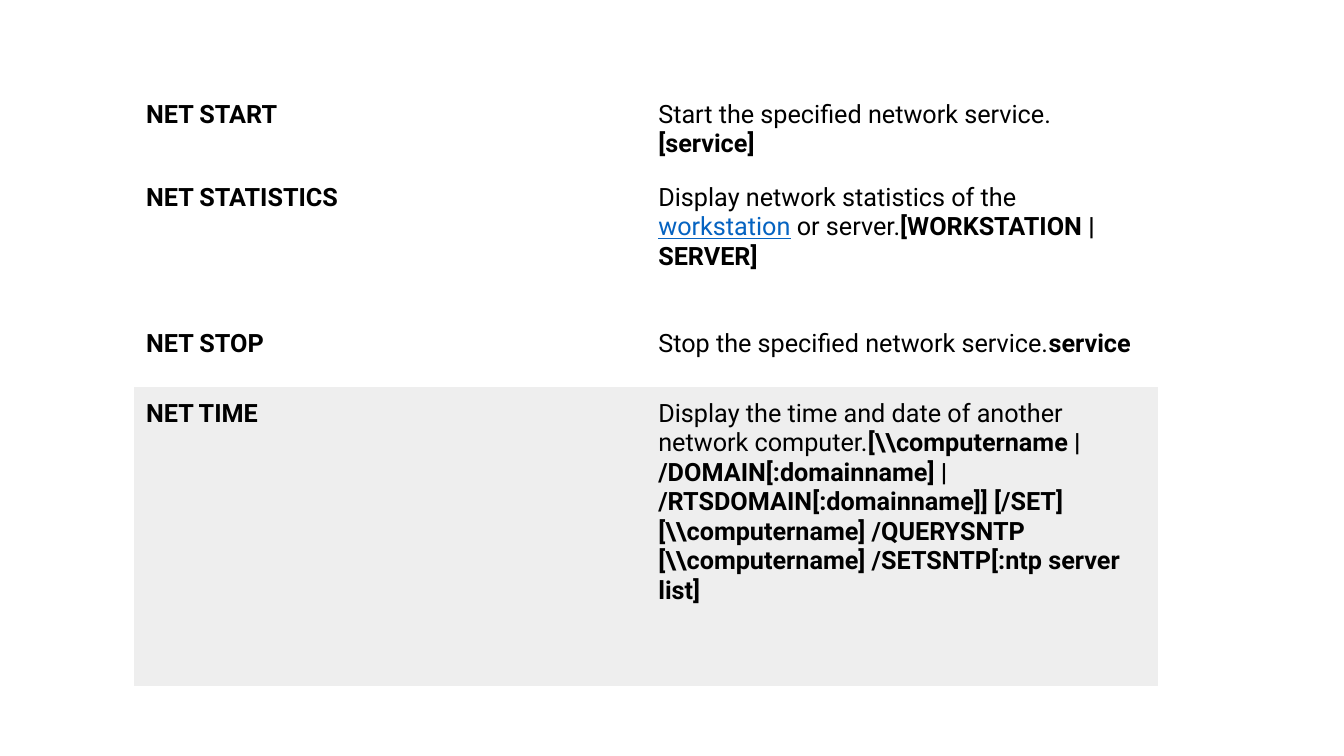
from dataclasses import dataclass

from pptx import Presentation
from pptx.dml.color import RGBColor
from pptx.util import Inches, Pt

BLANK_LAYOUT = 6
NO_STYLE_NO_GRID = "{2D5ABB26-0587-4C30-8999-92F81FD0307C}"


@dataclass(frozen=True)
class Theme:
    font: str = "Roboto"
    size: int = 18
    text: str = "000000"
    link: str = "0563C1"
    plain: str = "FFFFFF"
    shaded: str = "EEEEEE"


@dataclass(frozen=True)
class Grid:
    left: float = 1.33
    top: float = 0.87
    column: float = 5.08
    columns: int = 2
    margin: float = 0.12


@dataclass(frozen=True)
class Span:
    text: str
    bold: bool = False
    link: bool = False


@dataclass(frozen=True)
class Command:
    name: str
    height: float
    usage: tuple[Span, ...]
    shaded: bool = False


THEME = Theme()
GRID = Grid()

COMMANDS = (
    Command("NET START", 0.69, (
        Span("Start the specified network service."),
        Span("[service]", bold=True),
    )),
    Command("NET STATISTICS", 1.45, (
        Span("Display network statistics of the "),
        Span("workstation", link=True),
        Span(" or server."),
        Span("[WORKSTATION | SERVER]", bold=True),
    )),
    Command("NET STOP", 0.69, (
        Span("Stop the specified network service."),
        Span("service", bold=True),
    )),
    Command("NET TIME", 2.97, (
        Span("Display the time and date of another network computer."),
        Span("[\\\\computername | /DOMAIN[:domainname] | "
             "/RTSDOMAIN[:domainname]] [/SET]\n"
             "[\\\\computername] /QUERYSNTP\n"
             "[\\\\computername] /SETSNTP[:ntp server list]", bold=True),
    ), shaded=True),
)


def add_text(p, text: str, *, bold: bool = False, link: bool = False) -> None:
    """Add formatted text to a paragraph, with a line break at each newline."""
    for i, line in enumerate(text.split("\n")):
        if i:
            p.add_line_break()
        r = p.add_run()
        r.text = line
        r.font.name = THEME.font
        r.font.size = Pt(THEME.size)
        r.font.bold = bold
        r.font.underline = link
        r.font.color.rgb = RGBColor.from_string(THEME.link if link else THEME.text)


def fill_cell(cell, spans: tuple[Span, ...], fill: str) -> None:
    cell.fill.solid()
    cell.fill.fore_color.rgb = RGBColor.from_string(fill)
    margin = Inches(GRID.margin)
    cell.margin_left = cell.margin_right = margin
    cell.margin_top = cell.margin_bottom = margin
    p = cell.text_frame.paragraphs[0]
    for span in spans:
        add_text(p, span.text, bold=span.bold, link=span.link)


def add_command_table(slide, commands: tuple[Command, ...]) -> None:
    frame = slide.shapes.add_table(
        len(commands), GRID.columns, Inches(GRID.left), Inches(GRID.top),
        Inches(GRID.column * GRID.columns),
        Inches(sum(command.height for command in commands)))
    table = frame.table

    # Plain table without header, bands or grid lines
    table.first_row = table.horz_banding = False
    table._tbl.tblPr.find("{*}tableStyleId").text = NO_STYLE_NO_GRID

    for column in table.columns:
        column.width = Inches(GRID.column)
    for row, command in zip(table.rows, commands):
        row.height = Inches(command.height)
        fill = THEME.shaded if command.shaded else THEME.plain
        fill_cell(row.cells[0], (Span(command.name, bold=True),), fill)
        fill_cell(row.cells[1], command.usage, fill)


def main() -> None:
    prs = Presentation()
    prs.slide_width = Inches(13.33)
    prs.slide_height = Inches(7.5)
    slide = prs.slides.add_slide(prs.slide_layouts[BLANK_LAYOUT])
    add_command_table(slide, COMMANDS)
    prs.save("out.pptx")


if __name__ == "__main__":
    main()
